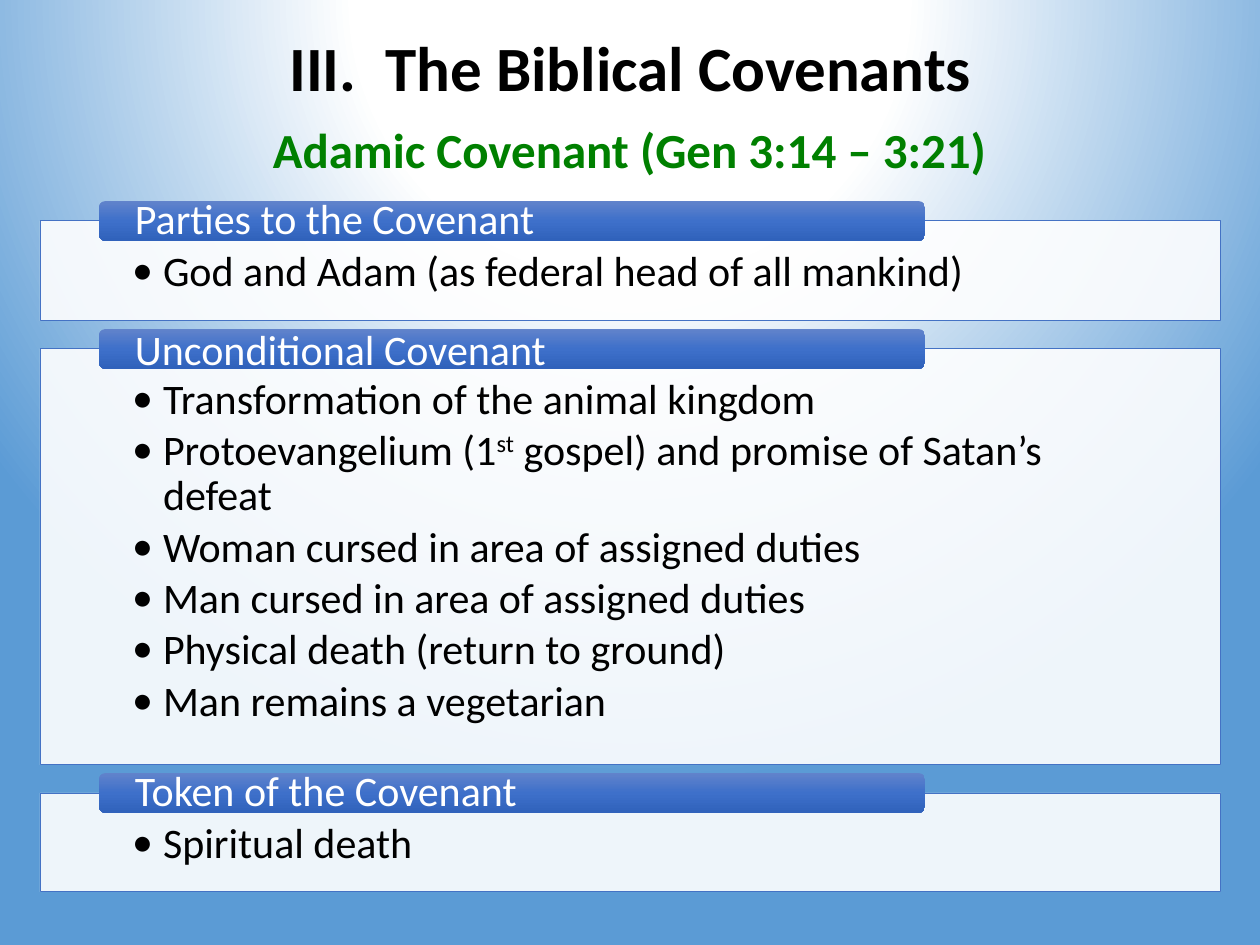
from dataclasses import dataclass

from pptx import Presentation
from pptx.dml.color import RGBColor
from pptx.enum.shapes import MSO_SHAPE
from pptx.enum.text import MSO_ANCHOR, PP_ALIGN
from pptx.oxml import parse_xml
from pptx.oxml.ns import nsdecls, qn
from pptx.util import Pt


@dataclass(frozen=True)
class Theme:
    font: str = "Calibri"
    title_size: int = 36
    subtitle_size: int = 28
    text_size: int = 24
    ink: str = "000000"
    paper: str = "FFFFFF"
    green: str = "008000"
    edge: str = "4472C4"
    backdrop: tuple = ((0, "FFFFFF"), (35, "FFFFFF"), (100, "5B9BD5"))
    tab: tuple = ((0, "6183CB"), (50, "3E70CA"), (100, "3062BB"))


THEME = Theme()
W, H = 1260, 945
PANEL_GAP = 28
TAB_H = 40

SECTIONS = [
    ("Parties to the Covenant", 100, 0.9,
     [["God and Adam (as federal head of all mankind)"]]),
    ("Unconditional Covenant", 416, 1.0,
     [["Transformation of the animal kingdom"],
      ["Protoevangelium (1", "st", " gospel) and promise of Satan’s defeat"],
      ["Woman cursed in area of assigned duties"],
      ["Man cursed in area of assigned duties"],
      ["Physical death (return to ground)"],
      ["Man remains a vegetarian"]]),
    ("Token of the Covenant", 99, 0.9, [["Spiritual death"]]),
]


def px(n):
    return round(n * 914400 / 126)


def put(obj, **values):
    for name, value in values.items():
        setattr(obj, name, value)


def place(sp, box):
    put(sp, **dict(zip(("left", "top", "width", "height"), map(px, box))))


def margins(tf, left, top, right, bottom):
    put(tf, margin_left=px(left), margin_top=px(top),
        margin_right=px(right), margin_bottom=px(bottom), word_wrap=True)


def write(p, text, size, color, bold=False):
    r = p.add_run()
    r.text = text
    put(r.font, name=THEME.font, size=Pt(size), bold=bold)
    r.font.color.rgb = RGBColor.from_string(color)
    return r


def bullet(p, indent, mark):
    pPr = p._p.get_or_add_pPr()
    pPr.set("marL", str(px(indent)))
    pPr.set("indent", str(-px(indent)))
    pPr.append(parse_xml(f'<a:buFont {nsdecls("a")} typeface="{THEME.font}"/>'))
    pPr.append(parse_xml(mark))


def gradient(stops, direction):
    gs = "".join(f'<a:gs pos="{pos * 1000}"><a:srgbClr val="{color}"/></a:gs>'
                 for pos, color in stops)
    return (f'<a:gradFill {nsdecls("a")} rotWithShape="1"><a:gsLst>{gs}</a:gsLst>'
            f'{direction}</a:gradFill>')


def add_background(s):
    fill = gradient(THEME.backdrop, '<a:path path="circle"><a:fillToRect l="50000" '
                    't="-80000" r="50000" b="180000"/></a:path>')
    s._element.cSld.insert(0, parse_xml(
        f'<p:bg {nsdecls("p", "a")}><p:bgPr>{fill}<a:effectLst/></p:bgPr></p:bg>'))


def add_title(s, box):
    sp = s.shapes.title
    place(sp, box)
    tf = sp.text_frame
    put(tf, vertical_anchor=MSO_ANCHOR.MIDDLE, word_wrap=True)
    p = tf.paragraphs[0]
    put(p, alignment=PP_ALIGN.CENTER, line_spacing=0.9)
    bullet(p, 96, f'<a:buAutoNum {nsdecls("a")} type="romanUcPeriod" startAt="3"/>')
    write(p, "The Biblical Covenants", THEME.title_size, THEME.ink, True)


def add_subtitle(s, box):
    tf = s.shapes.add_textbox(*map(px, box)).text_frame
    tf.word_wrap = True
    p = tf.paragraphs[0]
    p.alignment = PP_ALIGN.CENTER
    write(p, "Adamic Covenant (Gen 3:14 – 3:21)", THEME.subtitle_size, THEME.green, True)


def add_panel(s, box, points):
    sp = s.shapes.add_shape(MSO_SHAPE.RECTANGLE, *map(px, box))
    sp.shadow.inherit = False
    sp.fill.solid()
    sp.fill.fore_color.rgb = RGBColor.from_string(THEME.paper)
    color = sp._element.spPr.find(qn("a:solidFill"))[0]
    color.append(parse_xml(f'<a:alpha {nsdecls("a")} val="90000"/>'))
    sp.line.color.rgb = RGBColor.from_string(THEME.edge)
    sp.line.width = Pt(0.5)
    tf = sp.text_frame
    margins(tf, 92, 29, 92, 24)
    tf.vertical_anchor = MSO_ANCHOR.TOP
    for i, parts in enumerate(points):
        p = tf.add_paragraph() if i else tf.paragraphs[0]
        put(p, alignment=PP_ALIGN.LEFT, level=1, line_spacing=0.9, space_after=Pt(3.4))
        bullet(p, 31, f'<a:buChar {nsdecls("a")} char="•"/>')
        for j, text in enumerate(parts):
            r = write(p, text, THEME.text_size, THEME.ink)
            if j == 1:
                r.font._element.set("baseline", "30000")


def add_tab(s, box, text, spacing):
    sp = s.shapes.add_shape(MSO_SHAPE.ROUNDED_RECTANGLE, *map(px, box))
    sp.shadow.inherit = False
    sp.line.fill.background()
    sp._element.spPr.find(qn("a:prstGeom")).addnext(
        parse_xml(gradient(THEME.tab, '<a:lin ang="5400000" scaled="0"/>')))
    tf = sp.text_frame
    margins(tf, 34, 0, 34, 0)
    tf.vertical_anchor = MSO_ANCHOR.MIDDLE
    p = tf.paragraphs[0]
    put(p, alignment=PP_ALIGN.LEFT, line_spacing=spacing)
    write(p, text, THEME.text_size, THEME.paper)


def add_section(s, box, heading, spacing, points):
    x, y, w, h = box
    add_panel(s, box, points)
    add_tab(s, (x + w // 20, y - TAB_H // 2, w * 7 // 10, TAB_H), heading, spacing)


def main():
    prs = Presentation()
    put(prs, slide_width=px(W), slide_height=px(H))
    s = prs.slides.add_slide(prs.slide_layouts[5])
    add_background(s)
    add_title(s, (158, 28, 945, 86))
    add_subtitle(s, (258, 113, 743, 72))
    y = 221
    for heading, h, spacing, points in SECTIONS:
        add_section(s, (40, y, 1181, h), heading, spacing, points)
        y += h + PANEL_GAP
    prs.save("out.pptx")


if __name__ == "__main__":
    main()
